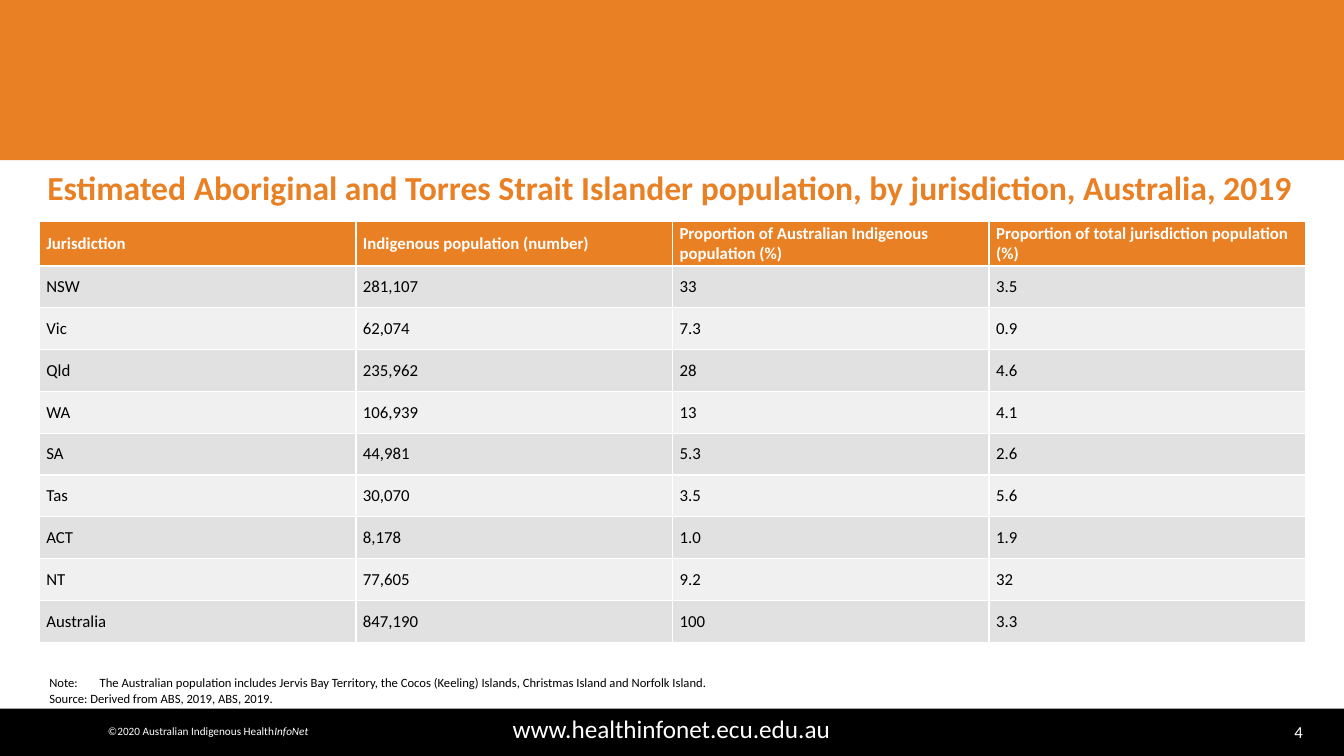
from lxml.etree import SubElement
from pptx import Presentation
from pptx.dml.color import RGBColor
from pptx.enum.shapes import MSO_SHAPE
from pptx.enum.text import MSO_ANCHOR, PP_ALIGN
from pptx.oxml.ns import qn
from pptx.util import Inches, Pt

ORANGE, BLACK, WHITE = "EA8024", "000000", "FFFFFF"
BANDS = ("E1E1E1", "F0F0F0")

HEADER = ("Jurisdiction", "Indigenous population (number)",
          "Proportion of Australian Indigenous population (%)",
          "Proportion of total jurisdiction population (%)")
POPULATION = (
    ("NSW", "281,107", "33", "3.5"),
    ("Vic", "62,074", "7.3", "0.9"),
    ("Qld", "235,962", "28", "4.6"),
    ("WA", "106,939", "13", "4.1"),
    ("SA", "44,981", "5.3", "2.6"),
    ("Tas", "30,070", "3.5", "5.6"),
    ("ACT", "8,178", "1.0", "1.9"),
    ("NT", "77,605", "9.2", "32"),
    ("Australia", "847,190", "100", "3.3"),
)


def rgb(value):
    return RGBColor.from_string(value)


class SlideBuilder:
    font = "Calibri"

    def __init__(self, prs):
        self.width, self.height = prs.slide_width, prs.slide_height
        self.slide = prs.slides.add_slide(prs.slide_layouts[6])

    def x(self, percent):
        return round(self.width * percent / 100)

    def y(self, percent):
        return round(self.height * percent / 100)

    def box(self, left, top, width, height):
        return self.x(left), self.y(top), self.x(width), self.y(height)

    def run(self, p, text, size, color, bold=False, italic=False):
        r = p.add_run()
        r.text = text
        r.font.name, r.font.size = self.font, Pt(size)
        r.font.bold, r.font.italic = bold, italic
        r.font.color.rgb = rgb(color)

    def band(self, place, color):
        sp = self.slide.shapes.add_shape(MSO_SHAPE.RECTANGLE, *self.box(*place))
        sp.shadow.inherit = False
        sp.fill.solid()
        sp.fill.fore_color.rgb = rgb(color)
        sp.line.fill.background()

    def text(self, place, paragraphs, size, color, align=PP_ALIGN.LEFT,
             bold=False, spacing=None, wrap=True, tabs=()):
        tf = self.slide.shapes.add_textbox(*self.box(*place)).text_frame
        tf.word_wrap = wrap
        for i, runs in enumerate(paragraphs):
            p = tf.add_paragraph() if i else tf.paragraphs[0]
            p.alignment = align
            p.line_spacing = spacing
            if tabs:
                stops = SubElement(p._p.get_or_add_pPr(), qn("a:tabLst"))
                for pos in tabs:
                    SubElement(stops, qn("a:tab"), pos=str(Inches(pos)), algn="l")
            for text, italic in runs:
                self.run(p, text, size, color, bold, italic)

    def cell(self, cell, text, fill, color, bold):
        cell.fill.solid()
        cell.fill.fore_color.rgb = rgb(fill)
        cell.vertical_anchor = MSO_ANCHOR.MIDDLE
        cell.margin_left = cell.margin_right = Inches(0.07)
        cell.margin_top = cell.margin_bottom = 0
        p = cell.text_frame.paragraphs[0]
        p.space_after = Pt(5)
        self.run(p, text, 12, color, bold)

    def table(self, left, top, width, header_height, row_height, header, rows):
        height = header_height + row_height * len(rows)
        table = self.slide.shapes.add_table(
            len(rows) + 1, len(header), *self.box(left, top, width, height)).table
        for col in table.columns:
            col.width = self.x(width / len(header))
        for i, values in enumerate((header, *rows)):
            table.rows[i].height = self.y(row_height if i else header_height)
            fill = BANDS[(i - 1) % 2] if i else ORANGE
            for j, value in enumerate(values):
                self.cell(table.cell(i, j), value, fill,
                          BLACK if i else WHITE, i == 0)


def main():
    prs = Presentation()
    prs.slide_width, prs.slide_height = Inches(13.33), Inches(7.5)
    s = SlideBuilder(prs)

    s.band((-0.23, 0, 100.23, 21.2), ORANGE)
    s.band((0, 93.73, 100, 6.27), BLACK)
    s.text((89.65, 94.8, 8.03, 4), [[("4", False)]], 12, WHITE, PP_ALIGN.RIGHT)
    s.text((4.65, 93.73, 90.62, 5.2), [[("www.healthinfonet.ecu.edu.au", False)]],
           18, WHITE, PP_ALIGN.CENTER)
    s.text((6.9, 95.2, 17.18, 3.2),
           [[("©2020 Australian Indigenous Health", False), ("InfoNet", True)]],
           8, WHITE, PP_ALIGN.CENTER, wrap=False)
    s.text((2.78, 22, 94.52, 7.33),
           [[("Estimated Aboriginal and Torres Strait Islander population, "
              "by jurisdiction, Australia, 2019", False)]],
           24, ORANGE, bold=True, spacing=0.9)
    s.table(2.93, 29.33, 94.22, 5.87, 5.53, HEADER, POPULATION)
    s.text((2.93, 88.67, 94.37, 5.33),
           [[("Note:\tThe Australian population includes Jervis Bay Territory, "
              "the Cocos (Keeling) Islands, Christmas Island and Norfolk Island.", False)],
            [("Source: Derived from ABS, 2019, ABS, 2019.", False)]],
           9, BLACK, tabs=(0.5, 0.65))

    prs.save("out.pptx")


if __name__ == "__main__":
    main()
